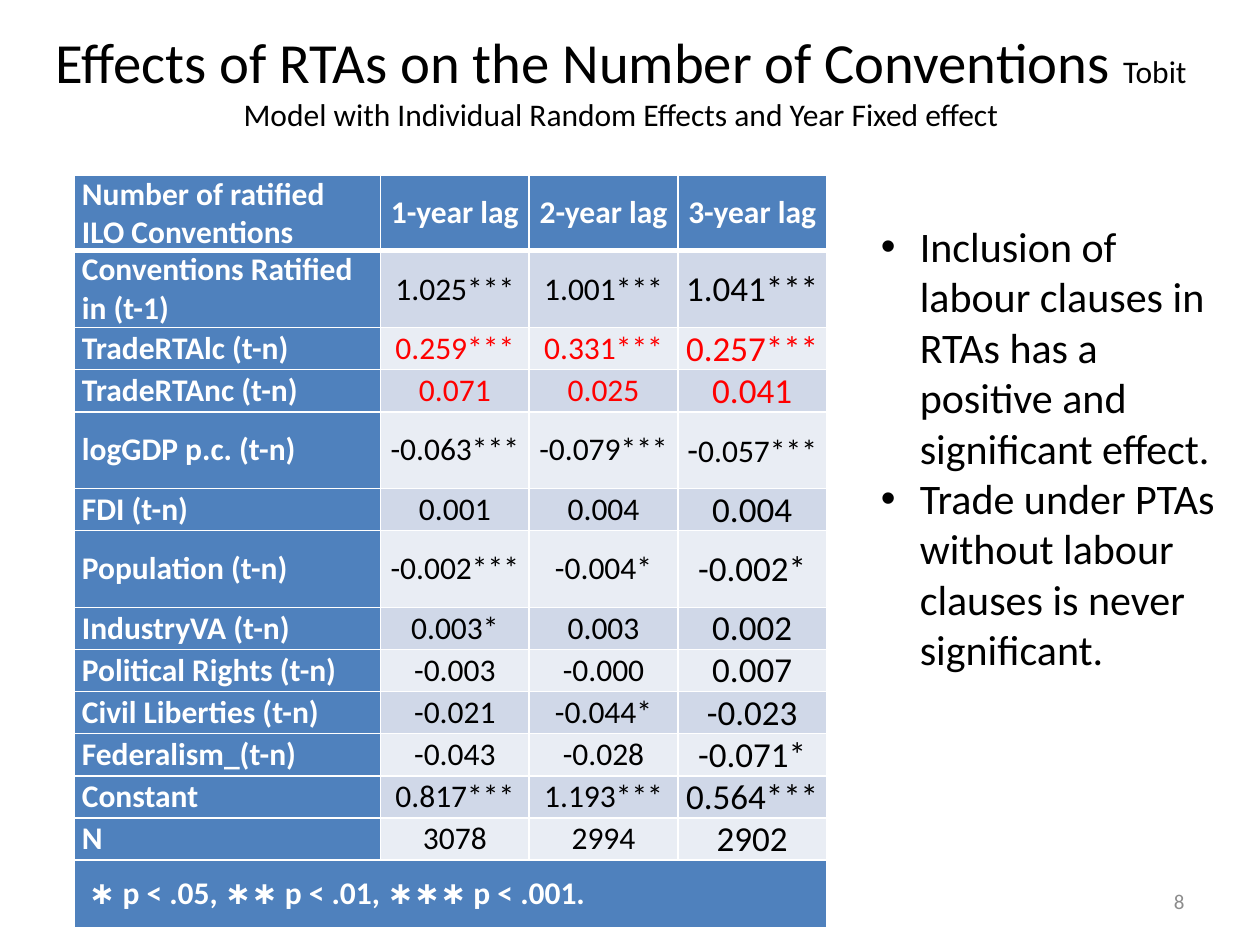
from lxml.etree import SubElement
from pptx import Presentation
from pptx.dml.color import RGBColor
from pptx.enum.text import MSO_ANCHOR as Anchor, MSO_AUTO_SIZE as AutoSize, PP_ALIGN as Align
from pptx.oxml.ns import qn
from pptx.util import Inches, Pt

BLACK = RGBColor(0x00, 0x00, 0x00)
WHITE = RGBColor(0xFF, 0xFF, 0xFF)
RED = RGBColor(0xFF, 0x00, 0x00)
GREY = RGBColor(0x8C, 0x8C, 0x8C)
BLUE = RGBColor(0x4F, 0x81, 0xBD)
BANDS = (RGBColor(0xE9, 0xED, 0xF4), RGBColor(0xD0, 0xD8, 0xE8))

HEADER = ("Number of ratified ILO Conventions", "1-year lag", "2-year lag", "3-year lag")
ROWS = (
    ("Conventions Ratified in (t-1)", "1.025***", "1.001***", "1.041***"),
    ("TradeRTAlc (t-n)", "0.259***", "0.331***", "0.257***"),
    ("TradeRTAnc (t-n)", "0.071", "0.025", "0.041"),
    ("logGDP p.c. (t-n)", "-0.063***", "-0.079***", "-0.057***"),
    ("FDI (t-n)", "0.001", "0.004", "0.004"),
    ("Population (t-n)", "-0.002***", "-0.004*", "-0.002*"),
    ("IndustryVA (t-n)", "0.003*", "0.003", "0.002"),
    ("Political Rights (t-n)", "-0.003", "-0.000", "0.007"),
    ("Civil Liberties (t-n)", "-0.021", "-0.044*", "-0.023"),
    ("Federalism_(t-n)", "-0.043", "-0.028", "-0.071*"),
    ("Constant", "0.817***", "1.193***", "0.564***"),
    ("N", "3078", "2994", "2902"),
)
FOOTNOTE = " ∗ p < .05, ∗∗ p < .01, ∗∗∗ p < .001."
TALL_ROWS = (1, 4, 6)
RED_ROWS = (2, 3)
SPLIT_CELL = (4, 3)
BULLETS = (
    "Inclusion of labour clauses in RTAs has a positive and significant effect.",
    "Trade under PTAs without labour clauses is never significant.",
)


class SlideBuilder:
    """Holds the text style and the current slide."""

    def __init__(self, s, font="Calibri"):
        self.s, self.font = s, font

    def style(self, r, size, color=BLACK, bold=False):
        r.font.name, r.font.size, r.font.bold = self.font, Pt(size), bold
        r.font.color.rgb = color

    def place(self, sp, left, top, width, height):
        sp.left, sp.top = Inches(left), Inches(top)
        sp.width, sp.height = Inches(width), Inches(height)

    def title(self, main, detail, box):
        sp = self.s.shapes.title
        self.place(sp, *box)
        tf = sp.text_frame
        tf.auto_size, tf.vertical_anchor = AutoSize.NONE, Anchor.MIDDLE
        tf.margin_left = tf.margin_right = tf.margin_top = tf.margin_bottom = 0
        p = tf.paragraphs[0]
        p.text, p.alignment = main, Align.CENTER
        p.add_run().text = detail
        for r, size in zip(p.runs, (32.4, 18)):
            self.style(r, size)

    def bullets(self, items, box):
        sp = self.s.placeholders[1]
        self.place(sp, *box)
        tf = sp.text_frame
        tf.text = "\n".join(items)
        tf.auto_size = AutoSize.SHAPE_TO_FIT_TEXT
        for p in tf.paragraphs:
            p.space_before = Pt(0)
            pPr = p._p.get_or_add_pPr()
            pPr.set("marL", str(Inches(0.31)))
            pPr.set("indent", str(-Inches(0.31)))
            SubElement(pPr, qn("a:buChar"), char="•")
            self.style(p.runs[0], 24)

    def text(self, text, box, size, color, align):
        tf = self.s.shapes.add_textbox(*map(Inches, box)).text_frame
        tf.word_wrap, tf.vertical_anchor = True, Anchor.MIDDLE
        p = tf.paragraphs[0]
        p.text, p.alignment = text, align
        self.style(p.runs[0], size, color)

    def borders(self, cell, bottom):
        tcPr = cell._tc.get_or_add_tcPr()
        for side, width in (("L", 1), ("R", 1), ("T", 1), ("B", bottom)):
            ln = SubElement(tcPr, qn(f"a:ln{side}"), w=str(Pt(width)))
            SubElement(SubElement(ln, qn("a:solidFill")), qn("a:srgbClr"), val=str(WHITE))

    def cell(self, cell, parts, sizes, fill, color, bold, align, bottom=1):
        self.borders(cell, bottom)
        cell.fill.solid()
        cell.fill.fore_color.rgb = fill
        cell.vertical_anchor = Anchor.MIDDLE
        cell.margin_left = cell.margin_right = Inches(0.06)
        cell.margin_top = cell.margin_bottom = 0
        p = cell.text_frame.paragraphs[0]
        p.text, p.alignment, p.space_before = parts[0], align, Pt(12)
        for part in parts[1:]:
            p.add_run().text = part
        for r, size in zip(p.runs, sizes):
            self.style(r, size, color, bold)

    def table(self, box, widths, heights):
        rows = (HEADER, *ROWS, (FOOTNOTE,))
        table = self.s.shapes.add_table(len(rows), len(widths), *map(Inches, box)).table
        for column, width in zip(table.columns, widths):
            column.width = Inches(width)
        for row, height in zip(table.rows, heights):
            row.height = Inches(height)
        last = len(rows) - 1
        table.cell(last, 0).merge(table.cell(last, len(widths) - 1))
        for i, row in enumerate(rows):
            for j, value in enumerate(row):
                align = Align.CENTER if j else Align.LEFT
                cell = table.cell(i, j)
                if i == 0 or j == 0:
                    self.cell(cell, (value,), (18,), BLUE, WHITE, True, align, 1 if i else 3)
                    continue
                parts, sizes = (value,), (20 if j == 3 else 18,)
                if (i, j) == SPLIT_CELL:
                    parts, sizes = (value[0], value[1:]), (20, 18)
                color = RED if i in RED_ROWS else BLACK
                self.cell(cell, parts, sizes, BANDS[i % 2], color, False, align)


def main():
    prs = Presentation()
    prs.slide_width, prs.slide_height = Inches(10), Inches(7.5)
    b = SlideBuilder(prs.slides.add_slide(prs.slide_layouts[1]))
    b.title("Effects of RTAs on the Number of Conventions ",
            "Tobit Model with Individual Random Effects and Year Fixed effect",
            (0.43, 0.01, 9, 1.25))
    body = [0.61 if i in TALL_ROWS else 0.31 for i in range(1, len(ROWS) + 1)]
    b.table((0.59, 1.39, 5.98, 5.98), (2.43, 1.18, 1.18, 1.18), (0.38, *body, 0.54))
    b.bullets(BULLETS, (6.89, 1.7, 2.95, 3.74))
    b.text("8", (7.17, 6.95, 2.33, 0.4), 12, GREY, Align.RIGHT)
    prs.save("out.pptx")


if __name__ == "__main__":
    main()
